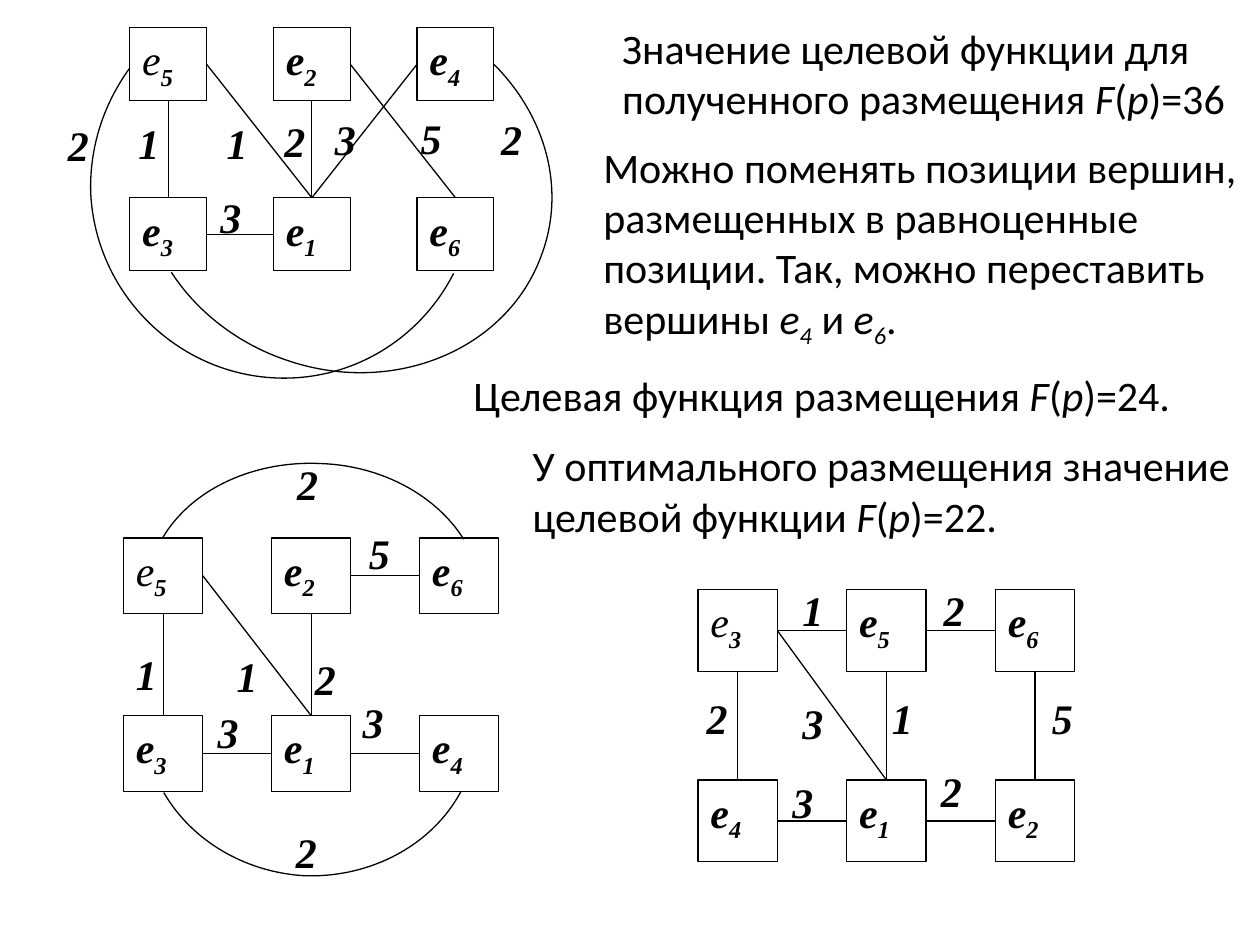
from dataclasses import dataclass

from lxml import etree
from pptx import Presentation
from pptx import util as u
from pptx.dml.color import RGBColor
from pptx.enum import shapes, text
from pptx.oxml.ns import qn

COLS, ROWS = 100, 75          # grid units across and down the slide
TOP, LEFT, BASE, RIGHT = range(4)   # connection sites of a rectangle


@dataclass(frozen=True)
class Theme:
    ink: RGBColor = RGBColor(0, 0, 0)
    paper: RGBColor = RGBColor(255, 255, 255)
    prose: str = "Calibri"
    math: str = "Times New Roman"
    size: u.Pt = u.Pt(24)
    line: u.Pt = u.Pt(0.75)
    gap: u.Pt = u.Pt(10)


class Sketch:
    """Holds the theme, the slide and the group being drawn."""

    def __init__(self, deck, theme):
        self.deck, self.theme = deck, theme
        self.slide = deck.slides.add_slide(deck.slide_layouts[6])
        self.group = None

    def x(self, cols):
        return u.Emu(round(self.deck.slide_width * cols / COLS))

    def y(self, rows):
        return u.Emu(round(self.deck.slide_height * rows / ROWS))

    def box(self, left, top, wide, high):
        return self.x(left), self.y(top), self.x(wide), self.y(high)

    def fill_in(self, frame, runs, font):
        """Each run is (words, marks): b bold, i italic, _ subscript."""
        frame.word_wrap = True
        frame.vertical_anchor = text.MSO_ANCHOR.TOP
        par = frame.paragraphs[0]
        par.alignment = text.PP_ALIGN.LEFT
        for words, marks in runs:
            run = par.add_run()
            run.text = words
            run.font.name, run.font.size = font, self.theme.size
            run.font.color.rgb = self.theme.ink
            run.font.bold, run.font.italic = "b" in marks, "i" in marks
            if "_" in marks:
                run.font._element.set("baseline", "-25000")
        return par

    def ink(self, item):
        item.line.color.rgb = self.theme.ink
        item.line.width = self.theme.line

    def prose(self, place, runs):
        item = self.slide.shapes.add_textbox(*self.box(*place))
        self.fill_in(item.text_frame, runs, self.theme.prose)
        item.text_frame.auto_size = text.MSO_AUTO_SIZE.SHAPE_TO_FIT_TEXT

    def node(self, place, num, bold):
        item = self.group.shapes.add_shape(
            shapes.MSO_SHAPE.RECTANGLE, *self.box(*place))
        item.shadow.inherit = False
        item.fill.solid()
        item.fill.fore_color.rgb = self.theme.paper
        self.ink(item)
        runs = [("e", "bi" if bold else "i"), (num, "bi_")]
        par = self.fill_in(item.text_frame, runs, self.theme.math)
        par.space_after = self.theme.gap
        return item

    def edge(self, start, out, end, into):
        item = self.group.shapes.add_connector(
            shapes.MSO_CONNECTOR.STRAIGHT, 0, 0, 0, 0)
        item.begin_connect(start, out)
        item.end_connect(end, into)
        self.ink(item)
        etree.SubElement(item._element.spPr, qn("a:effectLst"))

    def arc(self, start, *rest):
        """Open curve: a start, then three points for every Bezier piece."""
        pts = [(self.x(a), self.y(b)) for a, b in (start, *rest)]
        pen = self.group.shapes.build_freeform(*pts[0])
        pen.add_line_segments(pts[1:], close=False)
        item = pen.convert_to_shape()
        item.shadow.inherit = False
        item.fill.background()
        self.ink(item)
        # Turn each three straight steps into one cubic piece
        steps = list(item._element.iter(qn("a:lnTo")))
        track = steps[0].getparent()
        for i in range(0, len(steps), 3):
            curve = etree.SubElement(track, qn("a:cubicBezTo"))
            for step in steps[i:i + 3]:
                curve.append(step[0])
                track.remove(step)

    def label(self, num, left, top):
        item = self.group.shapes.add_textbox(*self.box(left, top, 6, 5.5))
        par = self.fill_in(item.text_frame, [(num, "bi")], self.theme.math)
        par.space_after = self.theme.gap

    def graph(self, left, top, step, drop, size, names, edges, arcs, labels):
        """Three by two nodes, then their edges, arcs and weights."""
        self.group = self.slide.shapes.add_group_shape()
        nodes = {}
        for i, num in enumerate(names):
            row, col = divmod(i, 3)
            place = (left + col * step, top + row * drop, *size)
            nodes[num] = self.node(place, num, bold=i > 0)
        for a, out, b, into in edges:
            self.edge(nodes[a], out, nodes[b], into)
        for pts in arcs:
            self.arc(*pts)
        for mark in labels:
            self.label(*mark)


def value(num):
    return [("F", "i"), ("(", ""), ("р", "i"), (")=" + num, "")]


def main():
    deck = Presentation()
    deck.slide_width, deck.slide_height = u.Inches(10), u.Inches(7.5)
    pad = Sketch(deck, Theme())

    # Explanations
    pad.prose((48.4, 1.3, 51.6, 9.1), [
        ("Значение целевой функции для полученного размещения ", ""),
        *value("36")])
    pad.prose((46.9, 10.7, 53.1, 17.2), [
        ("Можно поменять позиции вершин, размещенных в равноценные позиции. "
         "Так, можно переставить вершины ", ""),
        ("e", "i"), ("4", "i_"), (" и ", ""),
        ("e", "i"), ("6", "i_"), (".", "")])
    pad.prose((36.6, 28.8, 63.4, 5), [
        ("Целевая функция размещения ", ""), *value("24.")])
    pad.prose((41.3, 34.4, 58.3, 9.1), [
        ("У оптимального размещения значение целевой функции ", ""),
        *value("22.")])

    # First placement
    pad.graph(
        10.3, 2.2, 11.4, 13.5, (6.1, 5.8), "524316",
        [("5", BASE, "3", TOP), ("2", BASE, "1", TOP),
         ("3", RIGHT, "1", LEFT), ("2", RIGHT, "6", TOP),
         ("4", LEFT, "1", TOP), ("5", RIGHT, "1", TOP)],
        [[(39.2, 5.1), (43.4, 9.3), (44.9, 15.1), (43, 20.2),
          (40.3, 27.8), (31.1, 31.6), (22.5, 28.5),
          (18.8, 27.2), (15.6, 24.7), (13.6, 21.6)],
         [(36, 21.7), (33.5, 26.6), (28.6, 29.8), (23.1, 30),
          (14.7, 30.3), (7.6, 23.7), (7.2, 15.3),
          (7.1, 11.7), (8.2, 8.3), (10.3, 5.4)]],
        [("2", 4.4, 9), ("1", 10, 8.8), ("1", 17, 8.8), ("2", 21.6, 8.7),
         ("3", 25.6, 8.5), ("5", 32.4, 8.4), ("2", 38.8, 8.5),
         ("3", 16.5, 14.7)])

    # Placement with e4 and e6 swapped
    pad.graph(
        9.8, 42.7, 11.75, 14.1, (6.3, 6), "526314",
        [("5", BASE, "3", TOP), ("2", BASE, "1", TOP),
         ("3", RIGHT, "1", LEFT), ("5", RIGHT, "1", TOP),
         ("2", RIGHT, "6", LEFT), ("1", RIGHT, "4", LEFT)],
        [[(12.9, 42.7), (15.2, 38.8), (20.2, 36.5), (25.6, 36.8),
          (30.3, 37), (34.6, 39.3), (36.8, 42.8)],
         [(36.6, 62.8), (34.3, 67.1), (29.4, 69.7), (24.1, 69.5),
          (19.4, 69.2), (15.2, 66.7), (13, 62.9)]],
        [("2", 22.6, 35.9), ("5", 28.3, 41.4), ("1", 9.8, 51),
         ("1", 17.8, 51.1), ("2", 24, 51.4), ("3", 16.3, 55.6),
         ("3", 27.8, 54.8), ("2", 22.5, 65.1)])

    # Optimal placement
    pad.graph(
        55.4, 46.8, 11.8, 15.1, (6.3, 6.5), "356412",
        [("3", BASE, "4", TOP), ("5", BASE, "1", TOP),
         ("6", BASE, "2", TOP), ("3", RIGHT, "5", LEFT),
         ("5", RIGHT, "6", LEFT), ("4", RIGHT, "1", LEFT),
         ("1", RIGHT, "2", LEFT), ("3", RIGHT, "1", TOP)],
        [],
        [("1", 62.7, 45.9), ("2", 73.9, 45.9), ("2", 55.1, 54.5),
         ("3", 62.7, 54.9), ("1", 69.8, 54.5), ("5", 82.5, 54.5),
         ("3", 61.9, 61.1), ("2", 73.7, 60.3)])

    deck.save("out.pptx")


if __name__ == "__main__":
    main()
